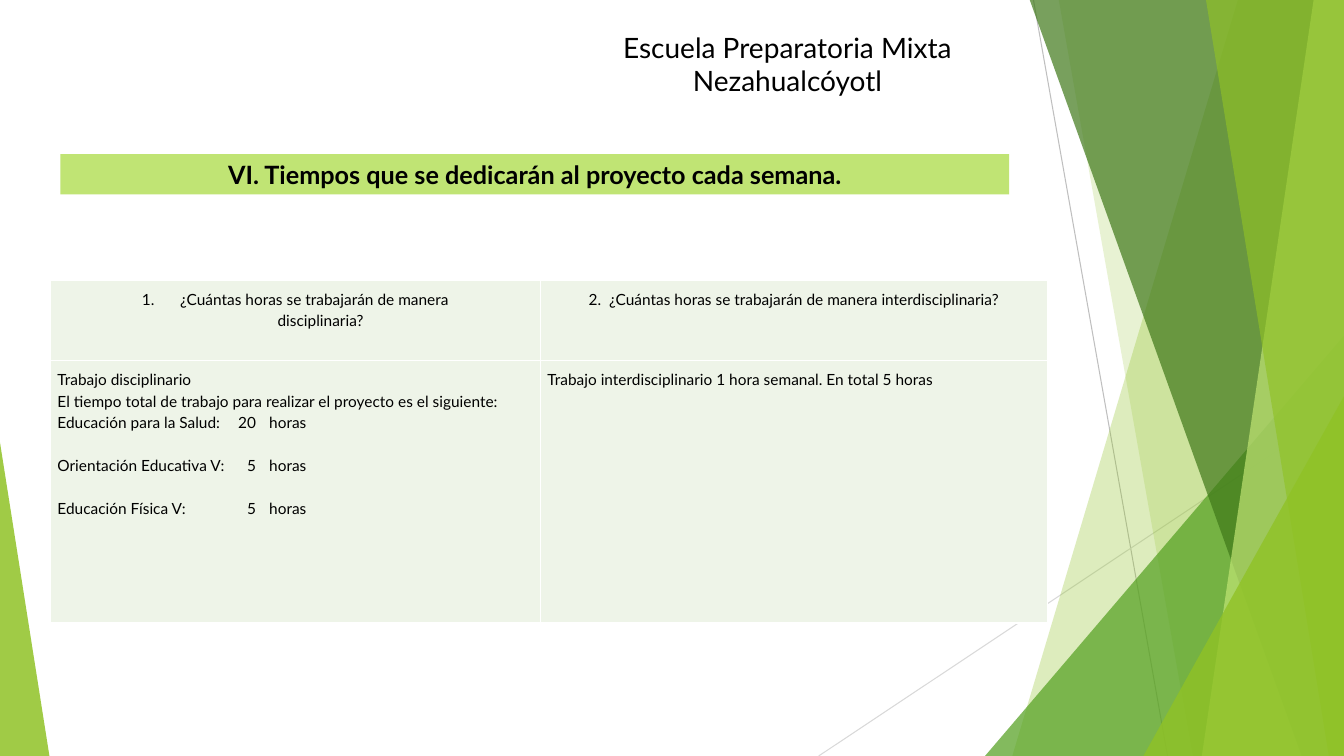
from lxml import etree
from pptx import Presentation
from pptx.dml.color import RGBColor
from pptx.enum.shapes import MSO_CONNECTOR, MSO_SHAPE
from pptx.enum.text import MSO_ANCHOR, MSO_AUTO_SIZE, PP_ALIGN
from pptx.oxml.ns import qn
from pptx.util import Inches, Pt

TRIANGLE = MSO_SHAPE.ISOSCELES_TRIANGLE
STRAIGHT = MSO_CONNECTOR.STRAIGHT
CENTER, LEFT = PP_ALIGN.CENTER, PP_ALIGN.LEFT
TOP, MIDDLE = MSO_ANCHOR.TOP, MSO_ANCHOR.MIDDLE
NO_AUTOFIT = MSO_AUTO_SIZE.NONE

FONT = "Lato"
GREEN, LIME, LEAF, FOREST = "90C226", "C0E474", "54A021", "3F7819"
CELL, WHITE, BLACK = "EEF4E8", "FFFFFF", "000000"
PAGE_TOP, PAGE_RIGHT, PAGE_BOTTOM = -0.01, 13.33, 7.5


def rgb(value):
    return RGBColor.from_string(value)


class SlideBuilder:
    """Holds the style and the current slide, and adds its elements."""

    def __init__(self, prs):
        self.s = prs.slides.add_slide(prs.slide_layouts[5])
        self.shapes = self.s.shapes

    def paint(self, sp, color, opacity=100):
        sp.fill.solid()
        sp.fill.fore_color.rgb = rgb(color)
        if opacity < 100:
            clr = sp._element.spPr.find(qn("a:solidFill"))[0]
            etree.SubElement(clr, qn("a:alpha"), val=str(opacity * 1000))

    def line(self, x1, y1, x2, y2, color):
        cn = self.shapes.add_connector(
            STRAIGHT, Inches(x1), Inches(y1), Inches(x2), Inches(y2))
        cn.line.color.rgb = rgb(color)
        cn.line.width = Pt(0.75)
        etree.SubElement(cn._element.spPr, qn("a:effectLst"))

    def band(self, top_x, bottom_x, color, opacity):
        corners = [(PAGE_RIGHT, PAGE_TOP), (PAGE_RIGHT, PAGE_BOTTOM),
                   (bottom_x, PAGE_BOTTOM)]
        fb = self.shapes.build_freeform(Inches(top_x), Inches(PAGE_TOP))
        fb.add_line_segments([(Inches(x), Inches(y)) for x, y in corners])
        sp = fb.convert_to_shape()
        sp.shadow.inherit = False
        sp.line.fill.background()
        self.paint(sp, color, opacity)

    def triangle(self, x, y, w, h, apex, color, opacity):
        sp = self.shapes.add_shape(
            TRIANGLE, Inches(x), Inches(y), Inches(w), Inches(h))
        sp.adjustments[0] = apex
        sp.shadow.inherit = False
        sp.line.fill.background()
        self.paint(sp, color, opacity)

    def format(self, p, size, align=LEFT, bold=False):
        p.alignment = align
        for r in p.runs:
            r.font.name = FONT
            r.font.size = Pt(size)
            r.font.bold = bold
            r.font.color.rgb = rgb(BLACK)

    def place(self, sp, x, y, w, h, text, size, anchor, bold=False):
        sp.left, sp.top, sp.width, sp.height = map(Inches, (x, y, w, h))
        tf = sp.text_frame
        tf.text = text
        tf.word_wrap = True
        tf.auto_size = NO_AUTOFIT
        tf.vertical_anchor = anchor
        self.format(tf.paragraphs[0], size, CENTER, bold)

    def title(self, x, y, w, h, text, size):
        sp = self.shapes.title
        self.place(sp, x, y, w, h, text, size, MIDDLE, True)
        self.paint(sp, LIME)
        self.shapes._spTree.append(sp._element)

    def text(self, x, y, w, h, text, size):
        sp = self.shapes.add_textbox(0, 0, 0, 0)
        self.place(sp, x, y, w, h, text, size, TOP)

    def borders(self, cell):
        tcPr = cell._tc.get_or_add_tcPr()
        for i, side in enumerate(("lnL", "lnR", "lnT", "lnB")):
            ln = etree.Element(qn("a:" + side), w=str(Pt(1)))
            fill = etree.SubElement(ln, qn("a:solidFill"))
            etree.SubElement(fill, qn("a:srgbClr"), val=WHITE)
            tcPr.insert(i, ln)

    def table(self, x, y, cols, rows, cells):
        frame = self.shapes.add_table(
            len(rows), len(cols), Inches(x), Inches(y),
            Inches(sum(cols)), Inches(sum(rows)))
        tbl = frame.table
        tbl.first_row = tbl.horz_banding = False
        for col, w in zip(tbl.columns, cols):
            col.width = Inches(w)
        for row, h in zip(tbl.rows, rows):
            row.height = Inches(h)
        for i, row in enumerate(cells):
            for j, lines in enumerate(row):
                cell = tbl.cell(i, j)
                cell.margin_left = cell.margin_right = Inches(0.07)
                cell.margin_top = cell.margin_bottom = Inches(0.07)
                cell.fill.solid()
                cell.fill.fore_color.rgb = rgb(CELL)
                self.borders(cell)
                cell.text_frame.text = "\n".join(lines)
                for p in cell.text_frame.paragraphs:
                    self.format(p, 11, LEFT if i else CENTER)
                    p.line_spacing = 1.15
        return tbl

    def number(self, p, left, hanging):
        pPr = p._p.get_or_add_pPr()
        pPr.set("marL", str(Inches(left)))
        pPr.set("indent", str(-Inches(hanging)))
        if hanging:
            etree.SubElement(pPr, qn("a:buFont"), typeface=FONT)
            etree.SubElement(pPr, qn("a:buAutoNum"), type="arabicPeriod")

    def tabs(self, p, stops):
        tab_list = etree.SubElement(p._p.get_or_add_pPr(), qn("a:tabLst"))
        for pos, align in stops:
            etree.SubElement(
                tab_list, qn("a:tab"), pos=str(Inches(pos)), algn=align)


def main():
    prs = Presentation()
    prs.slide_width, prs.slide_height = Inches(13.33), Inches(7.5)
    b = SlideBuilder(prs)

    b.line(10.25, 0, 11.58, 7.5, "BFBFBF")
    b.line(13.33, 4.03, 8.12, 7.5, "D9D9D9")
    b.band(12.28, 10.04, GREEN, 30)
    b.band(10.5, 11.83, GREEN, 20)
    b.triangle(9.77, 3.33, 3.56, 4.17, 1, LEAF, 72)
    b.band(10.21, 12.91, FOREST, 70)
    b.band(13.03, 11.92, LIME, 70)
    b.band(11.96, 13.18, GREEN, 65)
    b.triangle(11.34, 3.93, 1.99, 3.57, 1, GREEN, 80)
    b.triangle(0, 4.39, 0.49, 3.11, 0, GREEN, 85)

    b.title(0.6, 1.53, 9.41, 0.4,
            "VI. Tiempos que se dedicarán al proyecto cada semana.", 18)
    b.text(5.15, 0.25, 5.32, 0.44,
           "Escuela Preparatoria Mixta Nezahualcóyotl", 20)

    tbl = b.table(0.5, 2.78, [4.86, 5.03], [0.8, 2.6], [
        [["¿Cuántas horas se trabajarán de manera", "disciplinaria?"],
         ["2.  ¿Cuántas horas se trabajarán de manera interdisciplinaria?"]],
        [["Trabajo disciplinario",
          "El tiempo total de trabajo para realizar el proyecto es el siguiente:",
          "Educación para la Salud:\t20\thoras",
          "Orientación Educativa V:\t5\thoras",
          "Educación Física V:\t5\thoras"],
         ["Trabajo interdisciplinario 1 hora semanal. En total 5 horas"]],
    ])
    question, ending = tbl.cell(0, 0).text_frame.paragraphs
    b.number(question, 0.38, 0.38)
    b.number(ending, 0.5, 0)
    subjects = tbl.cell(1, 0).text_frame.paragraphs[2:]
    for p in subjects[1:]:
        p.space_before = Pt(15.2)
    for p in subjects:
        b.tabs(p, [(1.97, "r"), (2.1, "l")])

    prs.save("out.pptx")


if __name__ == "__main__":
    main()
